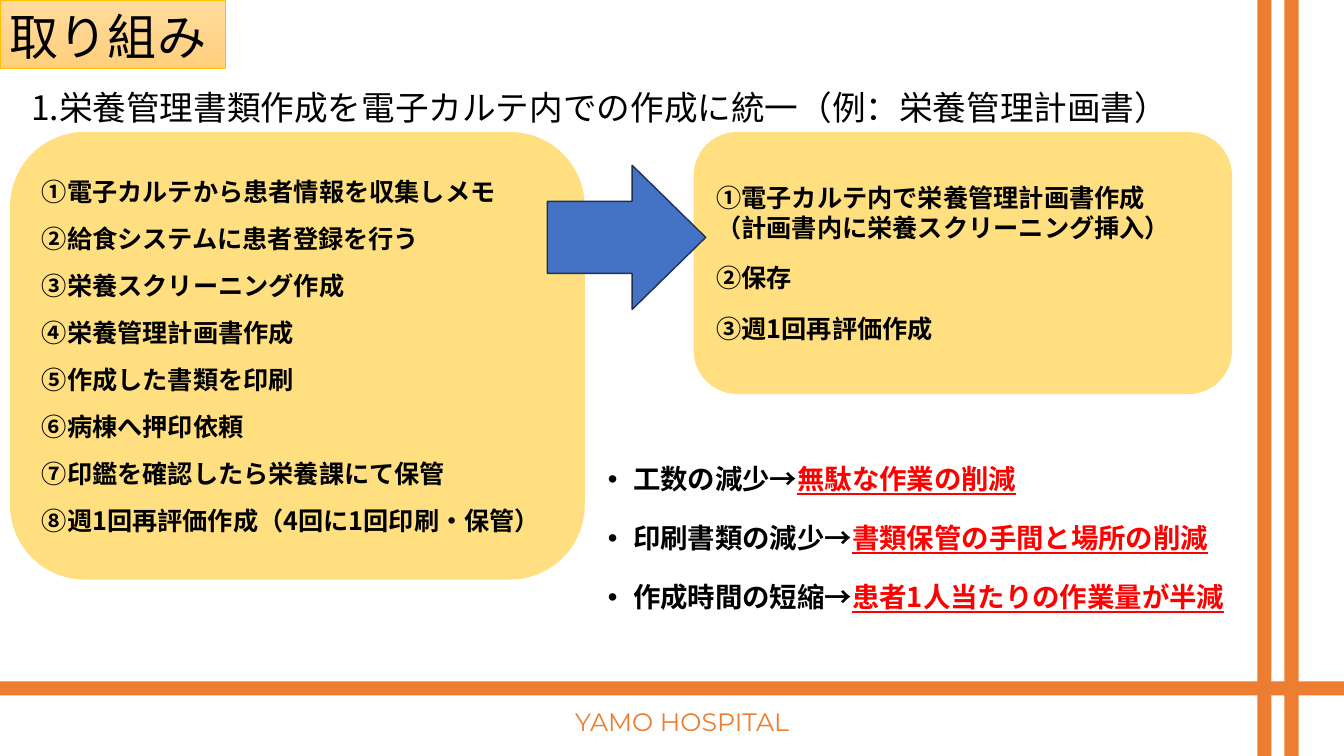
from dataclasses import dataclass

from lxml.etree import SubElement
from pptx import Presentation
from pptx.dml.color import RGBColor
from pptx.enum.shapes import MSO_SHAPE
from pptx.enum.text import MSO_ANCHOR, PP_ALIGN
from pptx.oxml.ns import qn
from pptx.shapes.autoshape import Shape
from pptx.slide import Slide
from pptx.text.text import Font, TextFrame
from pptx.util import Inches, Pt

ORANGE = RGBColor(0xED, 0x7D, 0x31)
AMBER = RGBColor(0xFF, 0xC0, 0x00)
PEACH = RGBColor(0xFF, 0xDB, 0x9E)
SAND = RGBColor(0xFF, 0xD0, 0x7C)
BLUE = RGBColor(0x44, 0x72, 0xC4)
NAVY = RGBColor(0x1E, 0x32, 0x56)
BLACK = RGBColor(0, 0, 0)
RED = RGBColor(0xFF, 0, 0)
SANS = "Noto Sans CJK JP"
LATIN = "Montserrat"


@dataclass
class Box:
    left: float
    top: float
    width: float
    height: float

    def place(self) -> tuple:
        return tuple(map(Inches, (self.left, self.top, self.width, self.height)))


@dataclass
class Style:
    size: float
    line: float
    bold: bool = False
    color: RGBColor = BLACK
    face: str = SANS


@dataclass
class Line:
    text: str
    before: float = 0


@dataclass
class Panel:
    box: Box
    lines: list[Line]


@dataclass
class Gain:
    cause: str
    effect: str


TITLE = Style(35.1, 44)
HEAD = Style(24, 28)
STEP = Style(18, 21.4, bold=True)
POINT = Style(19.6, 19, bold=True)
BRAND = Style(18, 22, color=ORANGE, face=LATIN)

BARS = [
    Box(0, 6.76, 13.33, 0.14),
    Box(12.47, 0, 0.14, 7.5),
    Box(12.74, 0, 0.14, 7.5),
]

OLD_STEPS = [
    "①電子カルテから患者情報を収集しメモ",
    "②給食システムに患者登録を行う",
    "③栄養スクリーニング作成",
    "④栄養管理計画書作成",
    "⑤作成した書類を印刷",
    "⑥病棟へ押印依頼",
    "⑦印鑑を確認したら栄養課にて保管",
    "⑧週1回再評価作成（4回に1回印刷・保管）",
]

PANELS = [
    Panel(
        Box(0.1, 1.31, 5.7, 4.44),
        [Line(step, 12.2 if i else 0) for i, step in enumerate(OLD_STEPS)],
    ),
    Panel(
        Box(6.88, 1.31, 5.34, 2.6),
        [
            Line("①電子カルテ内で栄養管理計画書作成"),
            Line("（計画書内に栄養スクリーニング挿入）"),
            Line("②保存", 14.4),
            Line("③週1回再評価作成", 14.4),
        ],
    ),
]

GAINS = [
    Gain("工数の減少→", "無駄な作業の削減"),
    Gain("印刷書類の減少→", "書類保管の手間と場所の削減"),
    Gain("作成時間の短縮→", "患者1人当たりの作業量が半減"),
]


def set_font(font: Font, style: Style) -> None:
    font.size = Pt(style.size)
    font.bold = style.bold
    font.color.rgb = style.color
    font.name = style.face
    SubElement(font._element, qn("a:ea"), typeface=style.face)


def write(frame: TextFrame, lines: list[Line], style: Style) -> None:
    for i, line in enumerate(lines):
        para = frame.add_paragraph() if i else frame.paragraphs[0]
        para.text = line.text
        para.alignment = PP_ALIGN.LEFT
        para.line_spacing = Pt(style.line)
        if line.before:
            para.space_before = Pt(line.before)
        set_font(para.font, style)


def add_shape(slide: Slide, kind: MSO_SHAPE, box: Box, color: RGBColor) -> Shape:
    shape = slide.shapes.add_shape(kind, *box.place())
    shape.shadow.inherit = False
    shape.fill.solid()
    shape.fill.fore_color.rgb = color
    shape.line.fill.background()
    shape.text_frame.vertical_anchor = MSO_ANCHOR.MIDDLE
    return shape


def add_text(slide: Slide, box: Box) -> TextFrame:
    frame = slide.shapes.add_textbox(*box.place()).text_frame
    frame.word_wrap = True
    return frame


def add_title(slide: Slide) -> None:
    shape = add_shape(slide, MSO_SHAPE.RECTANGLE, Box(0, 0, 2.24, 0.68), PEACH)
    shape.fill.gradient()
    shape.fill.gradient_angle = 270
    for stop, color in zip(shape.fill.gradient_stops, (PEACH, SAND)):
        stop.color.rgb = color
    shape.line.color.rgb = AMBER
    shape.line.width = Pt(0.5)
    write(shape.text_frame, [Line("取り組み")], TITLE)


def add_panel(slide: Slide, panel: Panel) -> None:
    shape = add_shape(slide, MSO_SHAPE.ROUNDED_RECTANGLE, panel.box, AMBER)
    tint = shape._element.spPr.find(qn("a:solidFill")).find(qn("a:srgbClr"))
    SubElement(tint, qn("a:alpha"), val="50000")
    write(shape.text_frame, panel.lines, STEP)


def add_arrow(slide: Slide) -> None:
    arrow = add_shape(slide, MSO_SHAPE.RIGHT_ARROW, Box(5.43, 1.64, 1.57, 1.43), BLUE)
    arrow.adjustments[1] = 0.51
    arrow.line.color.rgb = NAVY
    arrow.line.width = Pt(1)


def add_gains(slide: Slide) -> None:
    frame = add_text(slide, Box(5.93, 4.6, 6.58, 1.86))
    for i, gain in enumerate(GAINS):
        para = frame.add_paragraph() if i else frame.paragraphs[0]
        para.line_spacing = Pt(POINT.line)
        if i:
            para.space_before = Pt(23.2)
        props = para._p.get_or_add_pPr()
        props.set("marL", str(Inches(0.25)))
        props.set("indent", str(-Inches(0.25)))
        SubElement(props, qn("a:buFont"), typeface="Arial")
        SubElement(props, qn("a:buChar"), char="•")
        set_font(para.font, POINT)
        para.add_run().text = gain.cause
        effect = para.add_run()
        effect.text = gain.effect
        effect.font.color.rgb = RED
        effect.font.underline = True


def add_brand(slide: Slide) -> None:
    frame = add_text(slide, Box(5.5, 6.95, 2.53, 0.4))
    frame.word_wrap = False
    write(frame, [Line("YAMO HOSPITAL")], BRAND)
    frame.paragraphs[0].alignment = PP_ALIGN.CENTER


def main() -> None:
    deck = Presentation()
    deck.slide_width = Inches(13.33)
    deck.slide_height = Inches(7.5)
    slide = deck.slides.add_slide(deck.slide_layouts[6])
    add_brand(slide)
    for bar in BARS:
        add_shape(slide, MSO_SHAPE.RECTANGLE, bar, ORANGE)
    head = Line("1.栄養管理書類作成を電子カルテ内での作成に統一（例：栄養管理計画書）")
    write(add_text(slide, Box(0.21, 0.82, 12.01, 0.5)), [head], HEAD)
    add_title(slide)
    for panel in PANELS:
        add_panel(slide, panel)
    add_arrow(slide)
    add_gains(slide)
    deck.save("out.pptx")


if __name__ == "__main__":
    main()
